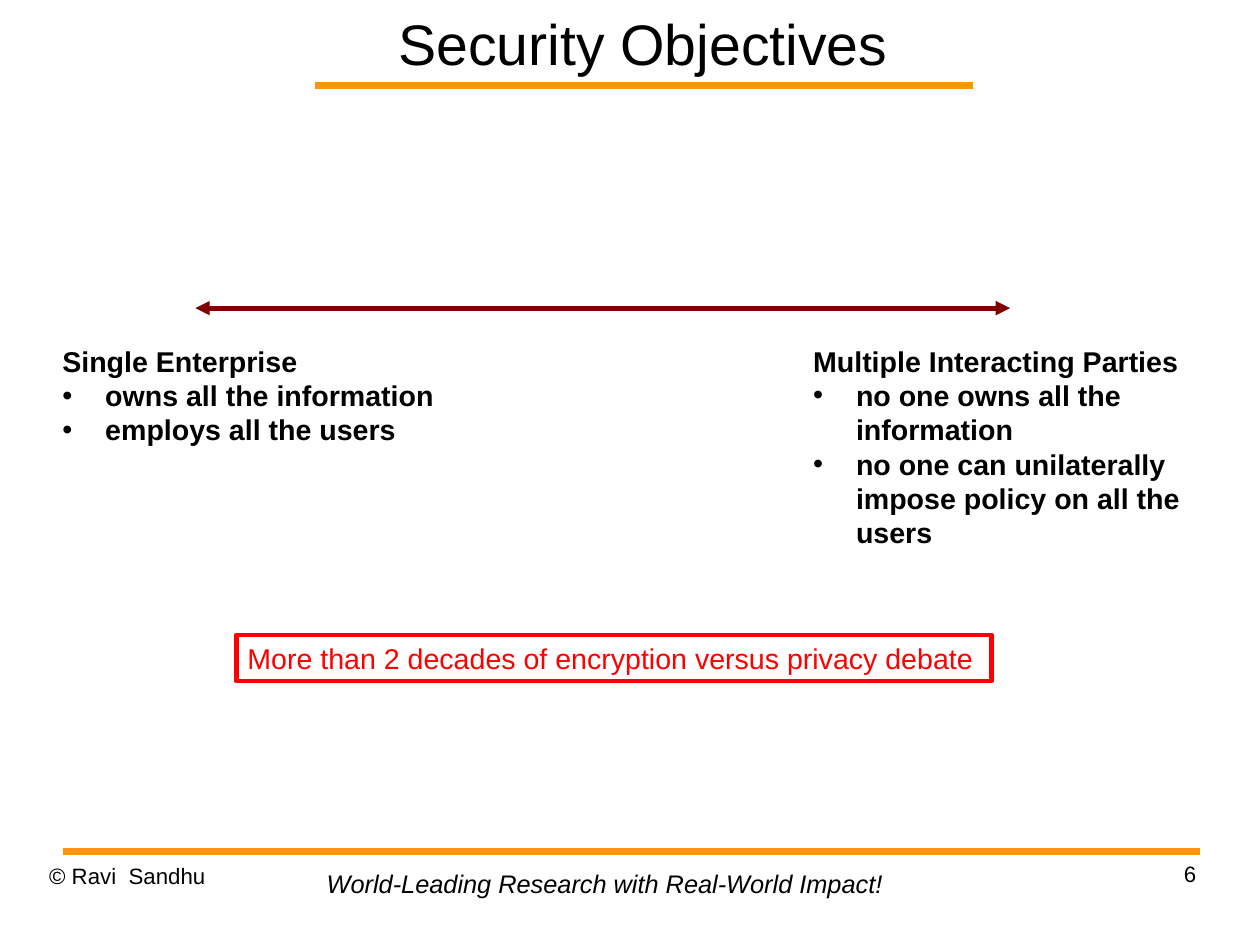
"""Build the Security Objectives slide."""
from lxml.etree import SubElement
from pptx import Presentation
from pptx.dml.color import RGBColor
from pptx.enum.shapes import MSO_CONNECTOR, MSO_SHAPE
from pptx.enum.text import MSO_ANCHOR, PP_ALIGN
from pptx.oxml.ns import qn
from pptx.util import Pt

COLORS = {"text": "000000", "rule": "FF950E", "arrow": "800000", "alert": "FF0000"}


class SlideBuilder:
    font = "Arial"
    indent = 27

    def __init__(self, slide):
        self.slide = slide

    def color(self, name):
        return RGBColor.from_string(COLORS[name])

    def line(self, x1, x2, y, color, width, arrows=False):
        cn = self.slide.shapes.add_connector(
            MSO_CONNECTOR.STRAIGHT, Pt(x1), Pt(y), Pt(x2), Pt(y))
        cn.line.color.rgb = self.color(color)
        cn.line.width = Pt(width)
        spPr = cn._element.spPr
        if arrows:
            ln = spPr.find(qn("a:ln"))
            for end in ("a:headEnd", "a:tailEnd"):
                SubElement(ln, qn(end), type="triangle")
        SubElement(spPr, qn("a:effectLst"))

    def style(self, p, size, color="text", bold=False, italic=False):
        for r in p.runs:
            r.font.name = self.font
            r.font.size = Pt(size)
            r.font.bold = bold
            r.font.italic = italic
            r.font.color.rgb = self.color(color)

    def text(self, box, text, size, align=PP_ALIGN.LEFT, anchor=MSO_ANCHOR.TOP,
             inset=True, wrap=True, spacing=None, italic=False):
        sp = self.slide.shapes.add_textbox(*map(Pt, box))
        tf = sp.text_frame
        tf.word_wrap = wrap
        tf.vertical_anchor = anchor
        if not inset:
            tf.margin_left = tf.margin_right = tf.margin_top = tf.margin_bottom = 0
        tf.text = text
        p = tf.paragraphs[0]
        p.alignment = align
        p.line_spacing = spacing
        self.style(p, size, italic=italic)

    def bullets(self, box, heading, items):
        tf = self.slide.shapes.add_textbox(*map(Pt, box)).text_frame
        tf.word_wrap = True
        tf.text = heading
        self.style(tf.paragraphs[0], 18, bold=True)
        for item in items:
            p = tf.add_paragraph()
            pPr = p._p.get_or_add_pPr()
            pPr.set("marL", str(Pt(self.indent)))
            pPr.set("indent", str(Pt(-self.indent)))
            SubElement(pPr, qn("a:buFont"), typeface=self.font)
            SubElement(pPr, qn("a:buChar"), char="•")
            p.text = item
            self.style(p, 18, bold=True)

    def callout(self, box, text, color):
        sp = self.slide.shapes.add_shape(MSO_SHAPE.RECTANGLE, *map(Pt, box))
        sp.shadow.inherit = False
        sp.fill.background()
        sp.line.color.rgb = self.color(color)
        sp.line.width = Pt(3)
        tf = sp.text_frame
        tf.word_wrap = False
        tf.vertical_anchor = MSO_ANCHOR.TOP
        tf.text = text
        tf.paragraphs[0].alignment = PP_ALIGN.LEFT
        self.style(tf.paragraphs[0], 18, color)


def main():
    prs = Presentation()
    prs.slide_width, prs.slide_height = Pt(793.75), Pt(595.25)
    s = SlideBuilder(prs.slides.add_slide(prs.slide_layouts[6]))

    s.line(198.7, 612.7, 54, "rule", 4.31)
    s.line(39.4, 755.8, 536.2, "rule", 4.31)
    s.text((31, 543.3, 185, 41), "© Ravi  Sandhu", 14, inset=False, spacing=1.01)
    s.text((568.6, 542, 185, 41), "6", 14, PP_ALIGN.RIGHT, inset=False, spacing=1.01)
    s.text((198.7, 543.6, 365.8, 26.6),
           "World-Leading Research with Real-World Impact!", 16, wrap=False, italic=True)
    s.text((173.5, 0, 463, 54), "Security Objectives", 36, PP_ALIGN.CENTER,
           MSO_ANCHOR.MIDDLE, inset=False)

    s.line(123.1, 636.3, 194.1, "arrow", 3, arrows=True)
    s.bullets((32.2, 213, 253.4, 72.7), "Single Enterprise",
              ["owns all the information", "employs all the users"])
    s.bullets((505.2, 212.9, 263.5, 138.2), "Multiple Interacting Parties",
              ["no one owns all the information",
               "no one can unilaterally impose policy on all the users"])
    s.callout((148.8, 400, 475.9, 29), 
              "More than 2 decades of encryption versus privacy debate", "alert")

    prs.save("out.pptx")


if __name__ == "__main__":
    main()
